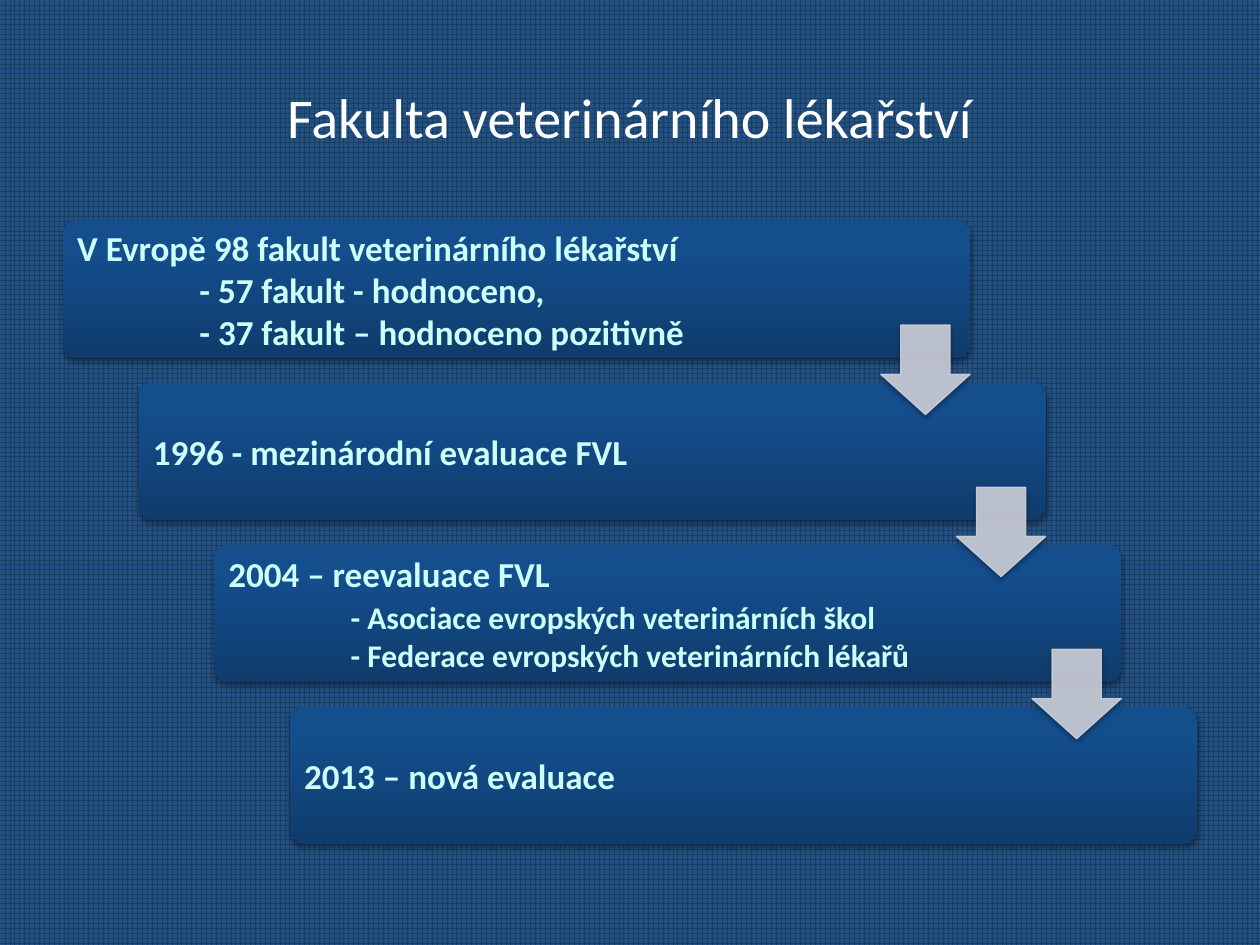
from lxml import etree
from pptx import Presentation
from pptx.dml.color import RGBColor
from pptx.enum.dml import MSO_PATTERN
from pptx.enum.shapes import MSO_SHAPE
from pptx.enum.text import MSO_ANCHOR, PP_ALIGN
from pptx.oxml import parse_xml
from pptx.oxml.ns import qn
from pptx.util import Inches, Pt

GRID = MSO_PATTERN.LARGE_GRID
ROUND = MSO_SHAPE.ROUNDED_RECTANGLE
DOWN = MSO_SHAPE.DOWN_ARROW
MIDDLE = MSO_ANCHOR.MIDDLE
LEFT, CENTER = PP_ALIGN.LEFT, PP_ALIGN.CENTER

FONT = "Calibri"
NAVY = RGBColor(0x1A, 0x3D, 0x62)
BLUE = RGBColor(0x23, 0x51, 0x83)
WHITE = RGBColor(0xFF, 0xFF, 0xFF)
MINT = RGBColor(0xCC, 0xFE, 0xFA)
GRAY = RGBColor(0xCD, 0xD0, 0xD9)
BLACK = RGBColor(0, 0, 0)
SHADES = [
    (0, RGBColor(0x0F, 0x3C, 0x6C)),
    (80, RGBColor(0x14, 0x4E, 0x8D)),
    (100, RGBColor(0x12, 0x4E, 0x90)),
]
NS = 'xmlns:a="http://schemas.openxmlformats.org/drawingml/2006/main"'

TITLE = [[("Fakulta veterinárního lékařství", 32)]]
STEPS = [
    [[("V Evropě 98 fakult veterinárního lékařství", 20)],
     [("\t- 57 fakult - hodnoceno,", 20)],
     [("\t- 37 fakult – hodnoceno pozitivně", 20)]],
    [[("1996 - mezinárodní evaluace FVL", 20)]],
    [[("2004 – reevaluace FVL", 20)],
     [("\t", 20), ("- Asociace evropských veterinárních škol", 18)],
     [("\t- Federace evropských veterinárních lékařů", 18)]],
    [[("2013 – nová evaluace", 20)]],
]


def add_shade(shape):
    """Give the shape a soft shadow falling straight down."""
    shape.shadow.inherit = False
    effects = shape._element.spPr.find(qn("a:effectLst"))
    effects.append(parse_xml(
        f'<a:outerShdw {NS} blurRad="{Pt(3.1)}" dist="{Pt(1.8)}" dir="5400000" '
        f'rotWithShape="0"><a:srgbClr val="{BLACK}"><a:alpha val="35000"/>'
        '</a:srgbClr></a:outerShdw>'))


def add_blend(shape):
    """Fill the shape with the gradient, running from bottom to top."""
    stops = "".join(
        f'<a:gs pos="{part * 1000}"><a:srgbClr val="{color}"/></a:gs>'
        for part, color in SHADES)
    shape.fill.solid()
    props = shape._element.spPr
    props.replace(props.find(qn("a:solidFill")), parse_xml(
        f'<a:gradFill {NS} rotWithShape="1"><a:gsLst>{stops}</a:gsLst>'
        '<a:lin ang="16200000" scaled="0"/></a:gradFill>'))


def set_tab(para):
    """Give the paragraph a tab stop for its inset lines."""
    tabs = etree.SubElement(para._p.get_or_add_pPr(), qn("a:tabLst"))
    etree.SubElement(tabs, qn("a:tab"), pos=str(Inches(0.97)), algn="l")


def add_text(slide, box, lines, color, align=LEFT, bold=False):
    """Write lines, each a list of (text, size) runs, in a text box."""
    frame = slide.shapes.add_textbox(*map(Inches, box)).text_frame
    frame.word_wrap = True
    frame.vertical_anchor = MIDDLE
    frame.margin_left = frame.margin_right = Pt(6)
    frame.margin_top = frame.margin_bottom = Pt(6)
    frame.text = "\n" * (len(lines) - 1)
    for para, line in zip(frame.paragraphs, lines):
        para.alignment = align
        for text, size in line:
            run = para.add_run()
            run.text = text
            run.font.name = FONT
            run.font.size = Pt(size)
            run.font.bold = bold
            run.font.color.rgb = color
        if para.text.startswith("\t"):
            set_tab(para)


def add_step(slide, box, lines):
    """Draw one step of the stairs with its text."""
    left, top, width, height = box
    card = slide.shapes.add_shape(ROUND, *map(Inches, box))
    card.adjustments[0] = 0.1
    card.line.fill.background()
    add_blend(card)
    add_shade(card)
    area = (left + 0.03, top + 0.03, width - 1.37, height - 0.06)
    add_text(slide, area, lines, MINT, bold=True)


def add_arrow(slide, box):
    """Draw one pale arrow that leads to the next step."""
    arrow = slide.shapes.add_shape(DOWN, *map(Inches, box))
    arrow.adjustments[0] = 0.55
    arrow.adjustments[1] = 0.45
    arrow.fill.solid()
    arrow.fill.fore_color.rgb = GRAY
    arrow.line.color.rgb = GRAY
    arrow.line.width = Pt(0.75)
    for color in arrow._element.spPr.iter(qn("a:srgbClr")):
        etree.SubElement(color, qn("a:alpha"), val="90000")
    add_shade(arrow)


def add_stairs(slide, box):
    """Place the steps from top left to bottom right, then the arrows."""
    left, top, width, height = box
    wide, tall, side = 7.2, 1.09, 0.71
    last = len(STEPS) - 1
    spots = [(left + i * (width - wide) / last, top + i * (height - tall) / last)
             for i in range(len(STEPS))]
    for (x, y), lines in zip(spots, STEPS):
        add_step(slide, (x, y, wide, tall), lines)
    for x, y in spots[:-1]:
        add_arrow(slide, (x + wide - side, y + 0.83, side, side))


def main():
    """Build the slide and save it."""
    deck = Presentation()
    deck.slide_width, deck.slide_height = Inches(10), Inches(7.5)
    slide = deck.slides.add_slide(deck.slide_layouts[6])
    fill = slide.background.fill
    fill.patterned()
    fill.pattern = GRID
    fill.fore_color.rgb = NAVY
    fill.back_color.rgb = BLUE
    add_text(slide, (0.5, 0.3, 9, 1.25), TITLE, WHITE, CENTER)
    add_stairs(slide, (0.5, 1.75, 9, 4.95))
    deck.save("out.pptx")


if __name__ == "__main__":
    main()
